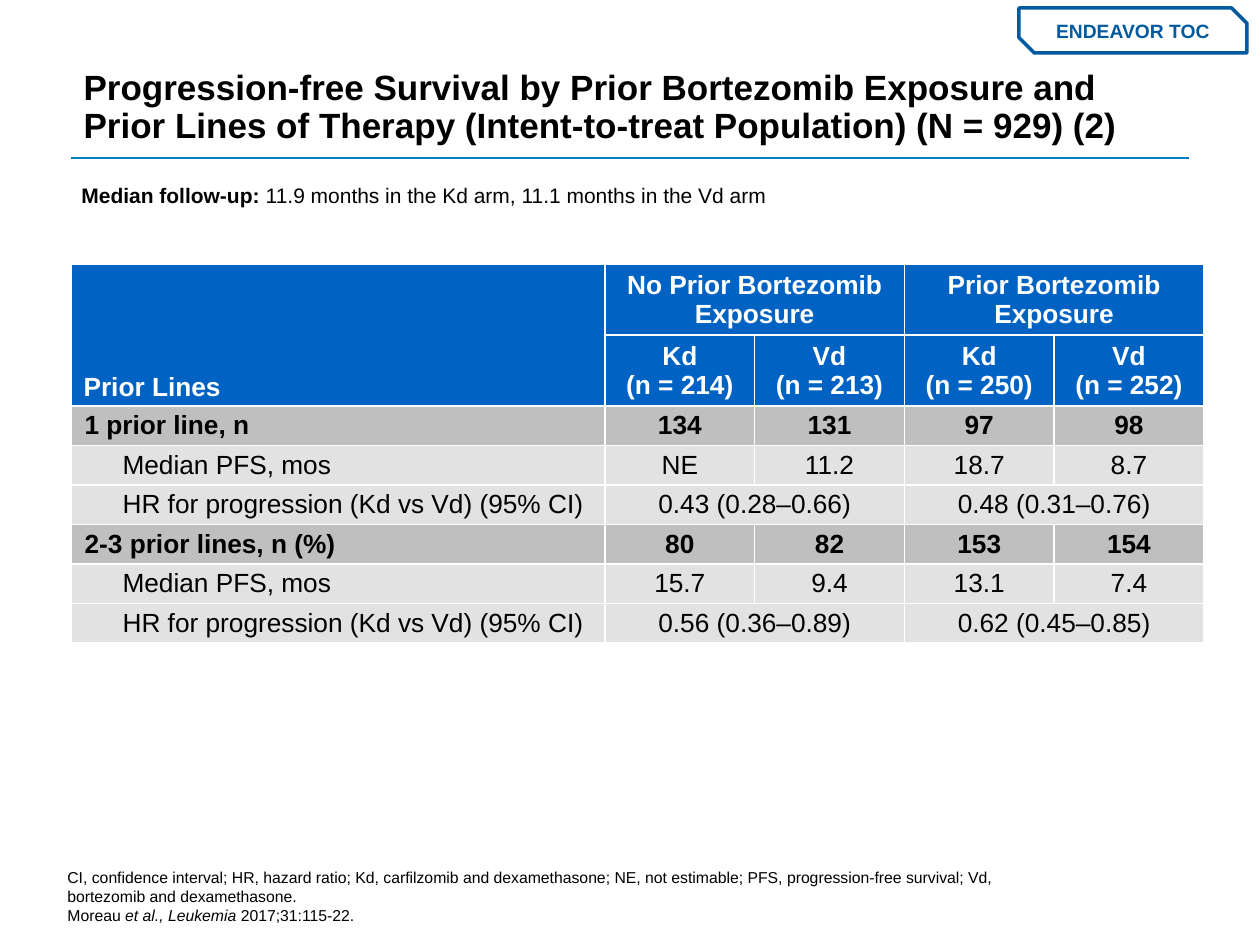
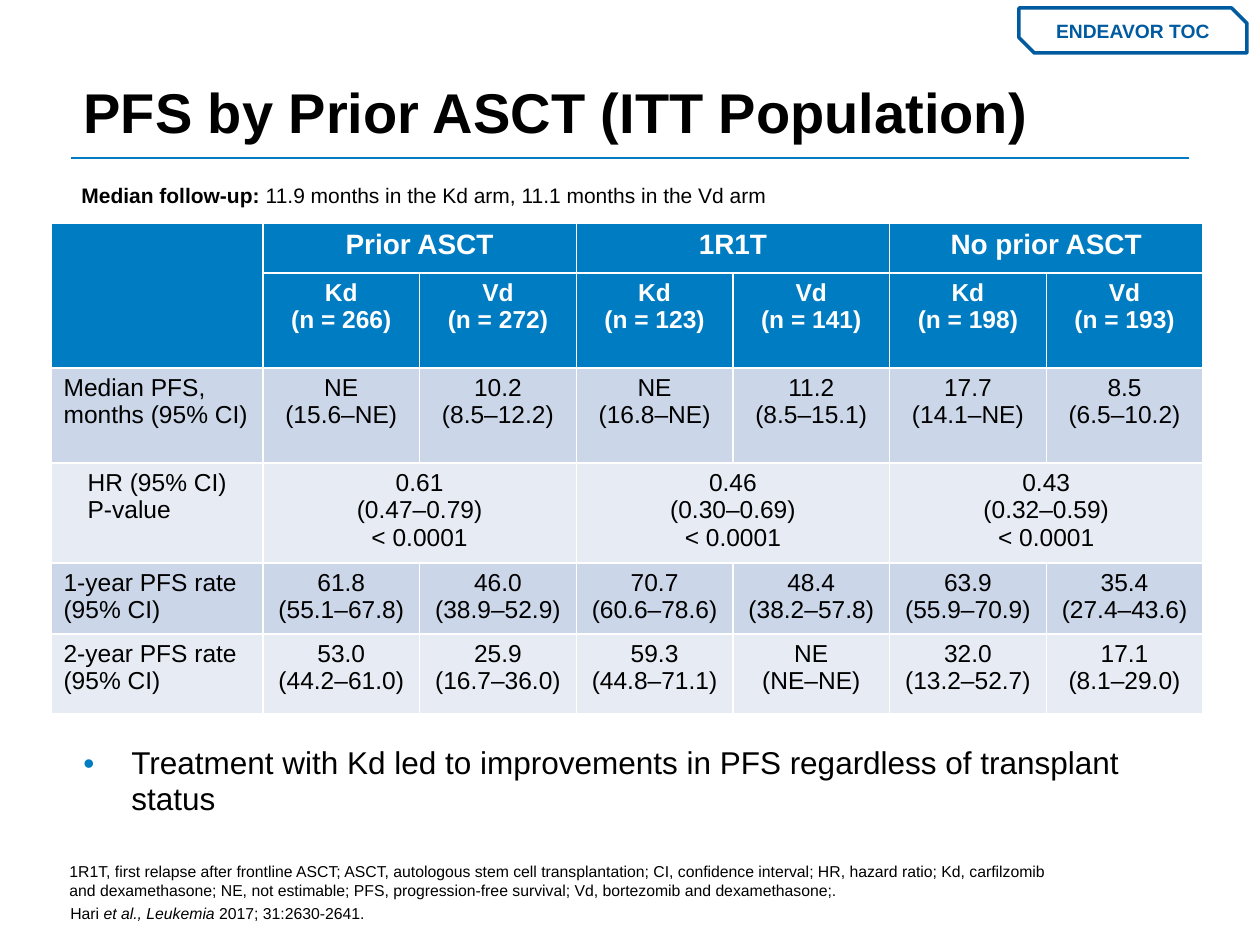
from dataclasses import dataclass

from lxml.etree import SubElement
from pptx import Presentation
from pptx.dml.color import RGBColor
from pptx.enum.shapes import MSO_CONNECTOR as Connector, MSO_SHAPE as Shape
from pptx.enum.text import MSO_ANCHOR as Anchor, PP_ALIGN as Align
from pptx.oxml.ns import qn
from pptx.util import Emu, Pt


@dataclass(frozen=True)
class Theme:
    font: str = "Arial"
    text: str = "000000"
    white: str = "FFFFFF"
    accent: str = "007CC2"
    badge: str = "005A9F"
    badge_size: int = 11
    follow_up_size: int = 12
    bullet_size: int = 18
    note_size: int = 9


@dataclass(frozen=True)
class RowStyle:
    fill: str
    size: int
    color: str = Theme.text
    bold: bool = False
    indent: int = 0


THEME = Theme()
PX = 914400 / 126

BADGE = "ENDEAVOR TOC"
FOLLOW_UP = [("Median follow-up:", "b"),
             (" 11.9 months in the Kd arm, 11.1 months in the Vd arm", "")]

# Each row is (height, style, cells). None joins the cell above in the first
# column and the cell to the left in the others.
EXPOSURE_STYLES = {
    "head": RowStyle("0063C3", 15, THEME.white, True),
    "section": RowStyle("BFBFBF", 15, bold=True, indent=1),
    "detail": RowStyle("E3E2E3", 15, indent=39),
}
EXPOSURE_ROWS = [
    (67, "head", ["Prior Lines", "No Prior Bortezomib Exposure", None,
                  "Prior Bortezomib\nExposure", None]),
    (68, "head", [None, "Kd\n(n = 214)", "Vd\n(n = 213)",
                  "Kd\n(n = 250)", "Vd\n(n = 252)"]),
    (38, "section", ["1 prior line, n", "134", "131", "97", "98"]),
    (38, "detail", ["Median PFS, mos", "NE", "11.2", "18.7", "8.7"]),
    (38, "detail", ["HR for progression (Kd vs Vd) (95% CI)",
                    "0.43 (0.28–0.66)", None, "0.48 (0.31–0.76)", None]),
    (38, "section", ["2-3 prior lines, n (%)", "80", "82", "153", "154"]),
    (38, "detail", ["Median PFS, mos", "15.7", "9.4", "13.1", "7.4"]),
    (38, "detail", ["HR for progression (Kd vs Vd) (95% CI)",
                    "0.56 (0.36–0.89)", None, "0.62 (0.45–0.85)", None]),
]

TRANSPLANT_STYLES = {
    "group": RowStyle(THEME.accent, 16, THEME.white, True),
    "arm": RowStyle(THEME.accent, 14, THEME.white, True),
    "dark": RowStyle("CBD7E9", 14),
    "light": RowStyle("E7ECF4", 14),
    "ratio": RowStyle("E7ECF4", 14, indent=24),
}
TRANSPLANT_ROWS = [
    (50, "group", ["", "Prior ASCT", None, "1R1T", None, "No prior ASCT", None]),
    (95, "arm", [None, "Kd\n(n = 266)", "Vd\n(n = 272)", "Kd\n(n = 123)",
                 "Vd\n(n = 141)", "Kd\n(n = 198)", "Vd\n(n = 193)"]),
    (95, "dark", ["Median PFS, months (95% CI)", "NE\n(15.6–NE)",
                  "10.2\n(8.5–12.2)", "NE\n(16.8–NE)", "11.2\n(8.5–15.1)",
                  "17.7\n(14.1–NE)", "8.5\n(6.5–10.2)"]),
    (95, "ratio", ["HR (95% CI)\nP-value", "0.61\n(0.47–0.79)\n< 0.0001", None,
                   "0.46\n(0.30–0.69)\n< 0.0001", None,
                   "0.43\n(0.32–0.59)\n< 0.0001", None]),
    (68, "dark", ["1-year PFS rate (95% CI)", "61.8\n(55.1–67.8)",
                  "46.0\n(38.9–52.9)", "70.7\n(60.6–78.6)", "48.4\n(38.2–57.8)",
                  "63.9\n(55.9–70.9)", "35.4\n(27.4–43.6)"]),
    (80, "light", ["2-year PFS rate (95% CI)", "53.0\n(44.2–61.0)",
                   "25.9\n(16.7–36.0)", "59.3\n(44.8–71.1)", "NE\n(NE–NE)",
                   "32.0\n(13.2–52.7)", "17.1\n(8.1–29.0)"]),
]

SLIDES = [
    {
        "title": ("Progression-free Survival by Prior Bortezomib Exposure and Prior "
                  "Lines of Therapy (Intent-to-treat Population) (N = 929) (2)", 20),
        "table": dict(rows=EXPOSURE_ROWS, styles=EXPOSURE_STYLES, place=(71, 264),
                      width=1133, label_width=534, inset=4, anchor=Anchor.MIDDLE),
        "notes": [
            dict(box=(55, 862, 1008, 50), segments=[(
                "CI, confidence interval; HR, hazard ratio; Kd, carfilzomib and "
                "dexamethasone; NE, not estimable; PFS, progression-free survival; "
                "Vd, bortezomib and dexamethasone.", "")]),
            dict(box=(55, 900, 320, 32), segments=[
                ("Moreau ", ""), ("et al., Leukemia ", "i"), ("2017;31:115-22.", "")]),
        ],
    },
    {
        "title": ("PFS by Prior ASCT (ITT Population)", 32),
        "table": dict(rows=TRANSPLANT_ROWS, styles=TRANSPLANT_STYLES, place=(51, 223),
                      width=1152, label_width=212, inset=6, anchor=Anchor.TOP),
        "bullet": "Treatment with Kd led to improvements in PFS regardless of "
                  "transplant status",
        "notes": [
            dict(box=(57, 856, 1028, 50), anchor=Anchor.BOTTOM, segments=[(
                "1R1T, first relapse after frontline ASCT; ASCT, autologous stem cell "
                "transplantation; CI, confidence interval; HR, hazard ratio; Kd, "
                "carfilzomib and dexamethasone; NE, not estimable; PFS, "
                "progression-free survival; Vd, bortezomib and dexamethasone;.", "")]),
            dict(box=(58, 819, 1009, 110), anchor=Anchor.BOTTOM, segments=[
                ("Hari ", ""), ("et al., Leukemia ", "i"), ("2017; 31:2630-2641.", "")]),
        ],
    },
]


def px(*lengths):
    return [Emu(round(length * PX)) for length in lengths]


def rgb(color):
    return RGBColor.from_string(color)


def style_font(font, size, color=THEME.text, bold=False, italic=False):
    font.name, font.size = THEME.font, Pt(size)
    font.bold, font.italic = bold, italic
    font.color.rgb = rgb(color)


def add_text(slide, box, segments, size, anchor=Anchor.TOP, line_spacing=None):
    """Add a one-paragraph text box of (text, "b" / "i" / "") segments."""
    frame = slide.shapes.add_textbox(*px(*box)).text_frame
    frame.word_wrap = True
    frame.vertical_anchor = anchor
    paragraph = frame.paragraphs[0]
    paragraph.line_spacing = line_spacing
    for text, emphasis in segments:
        run = paragraph.add_run()
        run.text = text
        style_font(run.font, size, bold=emphasis == "b", italic=emphasis == "i")
    return paragraph


def add_title(slide, text, size):
    title = slide.shapes.title
    title.left, title.top, title.width, title.height = px(71, 0, 1119, 152)
    frame = title.text_frame
    frame.text = text
    frame.word_wrap = True
    frame.vertical_anchor = Anchor.BOTTOM
    paragraph = frame.paragraphs[0]
    paragraph.alignment = Align.LEFT
    paragraph.line_spacing = 0.9
    style_font(paragraph.runs[0].font, size, bold=True)


def add_title_rule(slide):
    rule = slide.shapes.add_connector(Connector.STRAIGHT, *px(71, 158, 1189, 158))
    rule.line.color.rgb = rgb(THEME.accent)
    rule.line.width = Pt(1)
    SubElement(rule._element.spPr, qn("a:effectLst"))


def add_badge(slide):
    badge = slide.shapes.add_shape(Shape.SNIP_2_DIAG_RECTANGLE, *px(1019, 8, 228, 45))
    badge.adjustments[0], badge.adjustments[1] = 0, 0.34
    badge.shadow.inherit = False
    badge.fill.background()
    badge.line.color.rgb = rgb(THEME.badge)
    badge.line.width = Pt(2)
    frame = badge.text_frame
    frame.text = BADGE
    frame.word_wrap = False
    frame.vertical_anchor = Anchor.MIDDLE
    frame.paragraphs[0].alignment = Align.CENTER
    style_font(frame.paragraphs[0].runs[0].font, THEME.badge_size, THEME.badge, True)


def add_bullet(slide, text):
    paragraph = add_text(slide, (71, 740, 1119, 130), [(text, "")],
                         THEME.bullet_size, line_spacing=0.95)
    properties = paragraph._p.get_or_add_pPr()
    hang = px(48)[0]
    properties.set("marL", str(hang))
    properties.set("indent", str(-hang))
    color = SubElement(properties, qn("a:buClr"))
    SubElement(color, qn("a:srgbClr"), val=THEME.accent)
    SubElement(properties, qn("a:buFont"), typeface=THEME.font)
    SubElement(properties, qn("a:buChar"), char="•")


def add_borders(cell):
    properties = cell._tc.get_or_add_tcPr()
    for side in "LRTB":
        line = SubElement(properties, qn(f"a:ln{side}"), w=str(Pt(1)))
        fill = SubElement(line, qn("a:solidFill"))
        SubElement(fill, qn("a:srgbClr"), val=THEME.white)


def fill_cell(cell, text, style, is_label, inset, anchor):
    add_borders(cell)
    cell.fill.solid()
    cell.fill.fore_color.rgb = rgb(style.fill)
    cell.margin_left, cell.margin_right = px(12.6, 12.6)
    cell.margin_top, cell.margin_bottom = px(inset, inset)
    cell.vertical_anchor = anchor
    cell.text_frame.text = text or ""
    for paragraph in cell.text_frame.paragraphs:
        if not is_label:
            paragraph.alignment = Align.CENTER
        elif style.indent:
            paragraph._p.get_or_add_pPr().set("marL", str(px(style.indent)[0]))
        style_font(paragraph.font, style.size, style.color, style.bold)
        for run in paragraph.runs:
            style_font(run.font, style.size, style.color, style.bold)


def add_data_table(slide, rows, styles, place, width, label_width, inset, anchor):
    column_count = len(rows[0][2])
    height = sum(row[0] for row in rows)
    table = slide.shapes.add_table(len(rows), column_count,
                                   *px(*place, width, height)).table
    value_width = (width - label_width) / (column_count - 1)
    for index, column in enumerate(table.columns):
        column.width = px(value_width if index else label_width)[0]
    for r, (row_height, style_name, texts) in enumerate(rows):
        table.rows[r].height = px(row_height)[0]
        for c, text in enumerate(texts):
            spans_header = c == 0 and r == 0
            fill_cell(table.cell(r, c), text, styles[style_name], c == 0, inset,
                      Anchor.BOTTOM if spans_header else anchor)
            if text is None:
                first = table.cell(r, c - 1) if c else table.cell(r - 1, c)
                first.merge(table.cell(r, c))


def build_slide(presentation, content):
    slide = presentation.slides.add_slide(presentation.slide_layouts[5])
    add_title_rule(slide)
    add_title(slide, *content["title"])
    add_badge(slide)
    add_text(slide, (69, 178, 824, 43), FOLLOW_UP, THEME.follow_up_size,
             line_spacing=0.95)
    add_data_table(slide, **content["table"])
    if "bullet" in content:
        add_bullet(slide, content["bullet"])
    for note in content["notes"]:
        add_text(slide, size=THEME.note_size, **note)


def main():
    presentation = Presentation()
    presentation.slide_width, presentation.slide_height = px(1260, 945)
    for content in SLIDES:
        build_slide(presentation, content)
    presentation.save("out.pptx")


if __name__ == "__main__":
    main()
